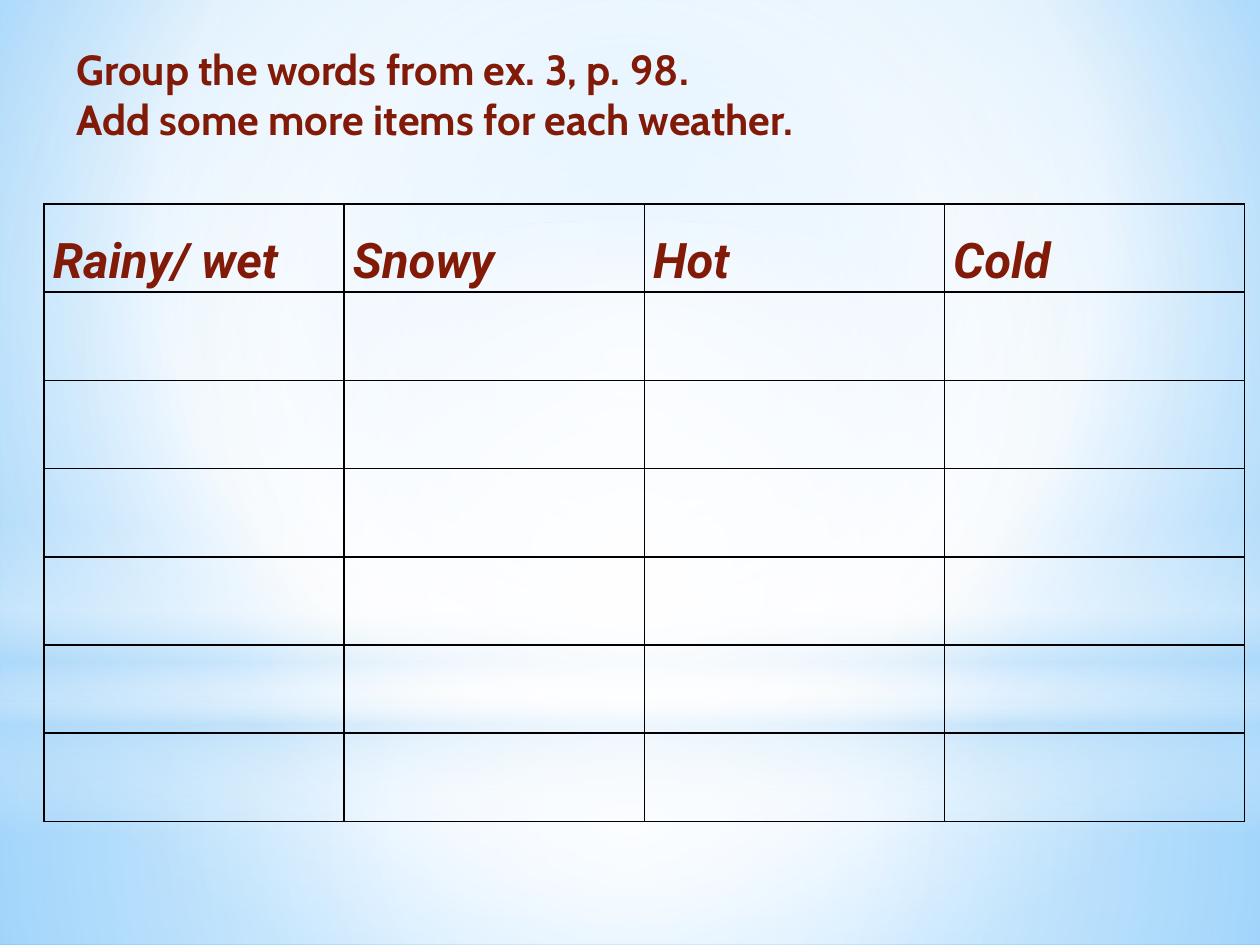
import pptx
import pptx.util
import pptx.dml.color
import pptx.enum.shapes
import pptx.enum.text
import pptx.oxml
import pptx.oxml.ns

Pt = pptx.util.Pt
RGBColor = pptx.dml.color.RGBColor
SHAPES = pptx.enum.shapes.MSO_SHAPE
qn = pptx.oxml.ns.qn
NAMESPACE = pptx.oxml.ns.nsdecls("a")

WHITE = RGBColor(0xFF, 0xFF, 0xFF)
BLACK = RGBColor(0x00, 0x00, 0x00)
BRICK = RGBColor(0x82, 0x1A, 0x08)
SKY = RGBColor(0x9E, 0xD5, 0xFF)
DEEP_SKY = RGBColor(0x5B, 0xB9, 0xFF)
PALE_SKY = RGBColor(0xB4, 0xDC, 0xFA)

WIDTH, HEIGHT = 720, 540
HORIZON = 402
CENTRE = (50, 50, 50, 50)
WEATHERS = ["Rainy/ wet", "Snowy", "Hot", "Cold"]
ROW_COUNT = 7
COLUMN_WIDTH, ROW_HEIGHT = 171.5, 50.4


class WeatherSlide:
    title_font = {"name": "Cabin", "size": Pt(24), "bold": True}
    header_font = {"name": "Roboto", "size": Pt(28), "bold": True, "italic": True}
    cell_format = {"margin_left": Pt(5), "margin_right": Pt(5),
                   "margin_top": 0, "margin_bottom": 0}

    def __init__(self, deck):
        self.page = deck.slides.add_slide(deck.slide_layouts[6])

    def apply(self, target, values):
        for name, value in values.items():
            setattr(target, name, value)

    def add_span(self, para, text, font):
        span = para.add_run()
        span.text = text
        self.apply(span.font, font)
        span.font.color.rgb = BRICK

    def gradient(self, owner, element, stops, focus=None):
        """Fill with (position, colour, opacity) stops, round a focus or downwards."""
        owner.fill.solid()
        marks = "".join(
            f'<a:gs pos="{position * 1000}"><a:srgbClr val="{colour}">'
            f'<a:alpha val="{opacity * 1000}"/></a:srgbClr></a:gs>'
            for position, colour, opacity in stops)
        if focus:
            sides = " ".join(f'{side}="{value * 1000}"' for side, value in zip("ltrb", focus))
            course = f'<a:path path="circle"><a:fillToRect {sides}/></a:path>'
        else:
            course = '<a:lin ang="5400000" scaled="0"/>'
        solid = next(element.iter(qn("a:solidFill")))
        solid.getparent().replace(solid, pptx.oxml.parse_xml(
            f'<a:gradFill {NAMESPACE} rotWithShape="1">'
            f'<a:gsLst>{marks}</a:gsLst>{course}</a:gradFill>'))

    def background(self, stops, focus):
        self.gradient(self.page.background, self.page.element, stops, focus)

    def glow(self, kind, top, height, stops, focus=None):
        shape = self.page.shapes.add_shape(kind, 0, Pt(top), Pt(WIDTH), Pt(height))
        shape.shadow.inherit = False
        shape.line.fill.background()
        self.gradient(shape, shape.element, stops, focus)

    def border(self, cell):
        properties = cell._tc.get_or_add_tcPr()
        for index, side in enumerate("LRTB"):
            properties.insert(index, pptx.oxml.parse_xml(
                f'<a:ln{side} {NAMESPACE} w="{Pt(1)}"><a:solidFill>'
                f'<a:srgbClr val="{BLACK}"/></a:solidFill></a:ln{side}>'))

    def table(self, left, top, headings):
        columns = len(headings)
        table = self.page.shapes.add_table(
            ROW_COUNT, columns, Pt(left), Pt(top),
            Pt(columns * COLUMN_WIDTH), Pt(ROW_COUNT * ROW_HEIGHT)).table
        self.apply(table, {"first_row": False, "horz_banding": False})
        for column in table.columns:
            column.width = Pt(COLUMN_WIDTH)
        for row in table.rows:
            row.height = Pt(ROW_HEIGHT)
        for cell in table.iter_cells():
            self.apply(cell, self.cell_format)
            cell.fill.background()
            self.border(cell)
        for cell, heading in zip(table.rows[0].cells, headings):
            para = cell.text_frame.paragraphs[0]
            para.line_spacing = 1.5
            self.add_span(para, heading, self.header_font)

    def title(self, left, top, width, height, lines):
        box = self.page.shapes.add_textbox(Pt(left), Pt(top), Pt(width), Pt(height))
        frame = box.text_frame
        self.apply(frame, {"word_wrap": True,
                           "auto_size": pptx.enum.text.MSO_AUTO_SIZE.SHAPE_TO_FIT_TEXT,
                           "vertical_anchor": pptx.enum.text.MSO_ANCHOR.MIDDLE})
        for index, line in enumerate(lines):
            para = frame.add_paragraph() if index else frame.paragraphs[0]
            self.add_span(para, line, self.title_font)


def main():
    deck = pptx.Presentation()
    deck.slide_width, deck.slide_height = Pt(WIDTH), Pt(HEIGHT)
    slide = WeatherSlide(deck)

    # Sky backdrop
    slide.background([(0, SKY, 100), (60, WHITE, 100), (100, DEEP_SKY, 100)],
                     (20, 10, 20, 60))
    slide.glow(SHAPES.RECTANGLE, HORIZON, HEIGHT - HORIZON,
               [(0, WHITE, 91), (37, WHITE, 76), (100, PALE_SKY, 79)], CENTRE)
    slide.glow(SHAPES.RECTANGLE, 0, HORIZON,
               [(0, WHITE, 89), (48, WHITE, 62), (100, PALE_SKY, 79)], CENTRE)
    slide.glow(SHAPES.RECTANGLE, 297, 180,
               [(0, WHITE, 0), (29, WHITE, 30), (45, PALE_SKY, 40),
                (55, WHITE, 26), (65, PALE_SKY, 60), (100, WHITE, 0)])
    slide.glow(SHAPES.OVAL, 126, HORIZON, [(0, WHITE, 100), (56, WHITE, 0)], CENTRE)

    # Weather table
    slide.table(25.2, 116.6, WEATHERS)

    # Task
    slide.title(36.7, 20.9, 663, 65.5, ["Group the words from ex. 3, p. 98.",
                                        "Add some more items for each weather."])
    deck.save("out.pptx")


if __name__ == "__main__":
    main()
